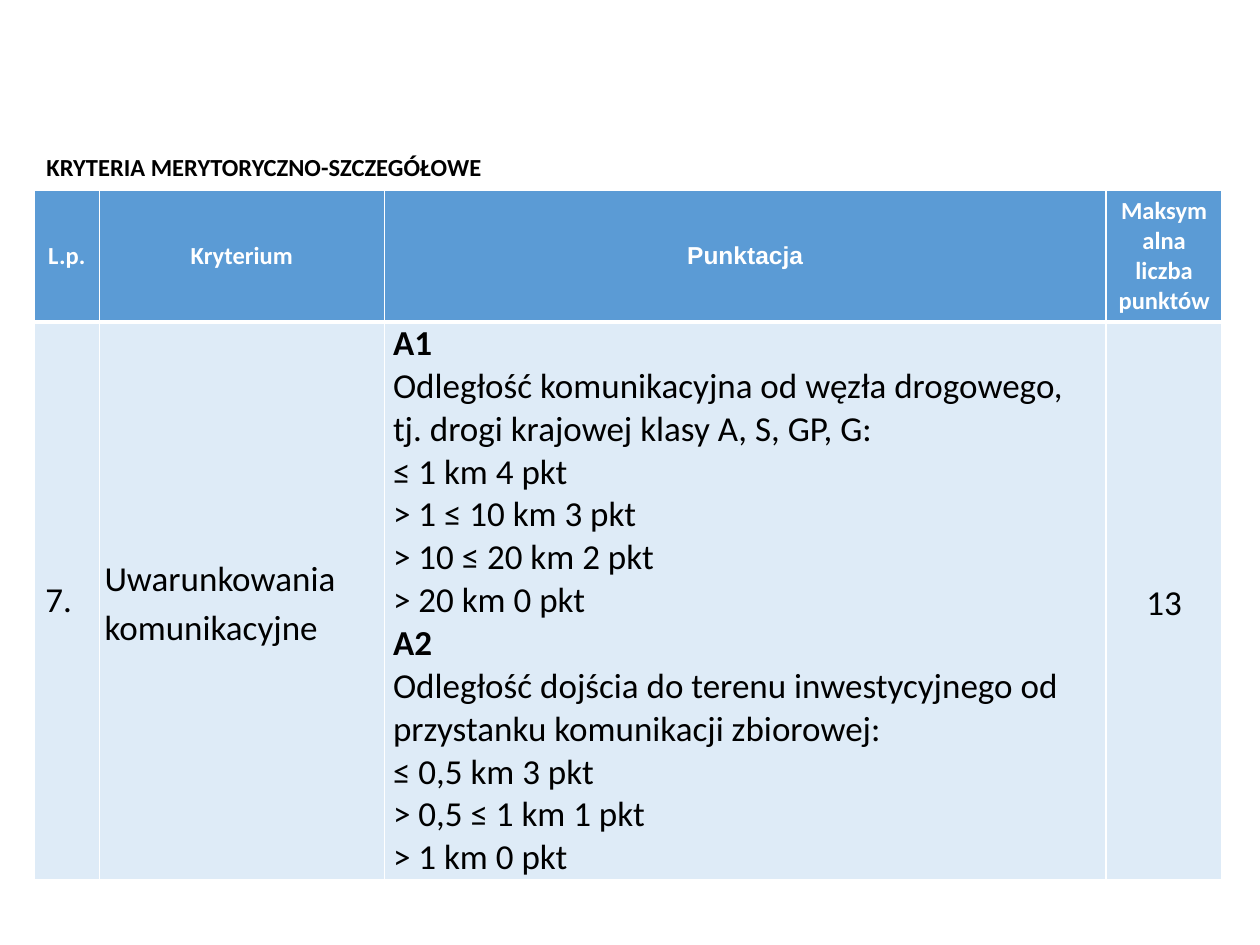
from lxml.etree import SubElement
from pptx import Presentation
from pptx.dml.color import RGBColor
from pptx.enum.text import MSO_ANCHOR, MSO_AUTO_SIZE, PP_ALIGN
from pptx.oxml.ns import qn
from pptx.util import Inches, Pt

WHITE = RGBColor(255, 255, 255)
BLACK = RGBColor(0, 0, 0)
BLUE = RGBColor(0x5B, 0x9B, 0xD5)
PALE = RGBColor(0xDE, 0xEB, 0xF7)

TITLE = "KRYTERIA MERYTORYCZNO-SZCZEGÓŁOWE"
WIDTHS = [0.52, 2.26, 5.73, 0.92]
HEIGHTS = [0.96, 4.36]
HEADS = ["L.p.", "Kryterium", "Punktacja", "Maksymalna liczba punktów"]
POINTS = [
    "A1",
    "Odległość komunikacyjna od węzła drogowego, tj. drogi krajowej klasy A, S, GP, G:",
    "≤ 1 km 4 pkt",
    "> 1 ≤ 10 km 3 pkt",
    "> 10 ≤ 20 km 2 pkt",
    "> 20 km 0 pkt",
    "A2",
    "Odległość dojścia do terenu inwestycyjnego od przystanku komunikacji zbiorowej:",
    "≤ 0,5 km 3 pkt",
    "> 0,5 ≤ 1 km 1 pkt",
    "> 1 km 0 pkt",
]
BODY = [
    {"lines": ["7."]},
    {"lines": ["Uwarunkowania", "komunikacyjne"], "inset": (0.04, 0.04), "space": 1.15},
    {"lines": POINTS, "inset": (0.07, 0), "anchor": MSO_ANCHOR.TOP},
    {"lines": ["13"], "inset": (0.04, 0.04), "space": 1.15, "align": PP_ALIGN.CENTER},
]


def write(frame, lines, size, color, bold=(), face="Calibri", align=PP_ALIGN.LEFT, space=None):
    """Write one paragraph per line, bold for the lines named in bold."""
    for i, line in enumerate(lines):
        para = frame.add_paragraph() if i else frame.paragraphs[0]
        para.alignment = align
        para.line_spacing = space
        run = para.add_run()
        run.text = line
        look = {"name": face, "size": Pt(size), "bold": line in bold}
        for key, value in look.items():
            setattr(run.font, key, value)
        run.font.color.rgb = color


def edge(cell, base):
    """Draw the white borders of a cell, with the given bottom width."""
    props = cell._tc.get_or_add_tcPr()
    for i, side in enumerate("LRTB"):
        width = Pt(base if side == "B" else 1)
        line = SubElement(props, qn(f"a:ln{side}"), w=str(width))
        fill = SubElement(line, qn("a:solidFill"))
        SubElement(fill, qn("a:srgbClr"), val=str(WHITE))
        props.insert(i, line)


def paint(cell, color, base, anchor=MSO_ANCHOR.MIDDLE, inset=(0.09, 0.05)):
    """Set the fill, borders, anchor and margins of a cell."""
    cell.fill.solid()
    cell.fill.fore_color.rgb = color
    edge(cell, base)
    side, end = (Inches(gap) for gap in inset)
    form = {
        "vertical_anchor": anchor,
        "margin_left": side,
        "margin_right": side,
        "margin_top": end,
        "margin_bottom": end,
    }
    for key, value in form.items():
        setattr(cell, key, value)


def add_grid(slide):
    """Add the table of criteria and points."""
    place = [Inches(n) for n in (0.27, 1.51, sum(WIDTHS), sum(HEIGHTS))]
    grid = slide.shapes.add_table(len(HEIGHTS), len(WIDTHS), *place).table
    grid.first_row = grid.horz_banding = False
    for col, width in zip(grid.columns, WIDTHS):
        col.width = Inches(width)
    for row, height in zip(grid.rows, HEIGHTS):
        row.height = Inches(height)
    for i, (head, body) in enumerate(zip(HEADS, BODY)):
        cell = grid.cell(0, i)
        paint(cell, BLUE, 3)
        face = "Arial" if head == "Punktacja" else "Calibri"
        write(cell.text_frame, [head], 14, WHITE, [head], face, PP_ALIGN.CENTER)
        cell = grid.cell(1, i)
        paint(cell, PALE, 1, **{k: body[k] for k in ("anchor", "inset") if k in body})
        form = {k: body[k] for k in ("align", "space") if k in body}
        write(cell.text_frame, body["lines"], 20, BLACK, ["A1", "A2"], **form)


def add_title(slide):
    """Add the heading above the table."""
    place = [Inches(n) for n in (0.27, 1.15, 3.68, 0.34)]
    frame = slide.shapes.add_textbox(*place).text_frame
    form = {
        "word_wrap": False,
        "auto_size": MSO_AUTO_SIZE.SHAPE_TO_FIT_TEXT,
        "vertical_anchor": MSO_ANCHOR.MIDDLE,
    }
    for key, value in form.items():
        setattr(frame, key, value)
    write(frame, [TITLE], 14, BLACK, [TITLE])


def main():
    """Build the slide and save it."""
    deck = Presentation()
    deck.slide_width, deck.slide_height = Inches(10), Inches(7.5)
    slide = deck.slides.add_slide(deck.slide_layouts[6])
    add_grid(slide)
    add_title(slide)
    deck.save("out.pptx")


if __name__ == "__main__":
    main()
